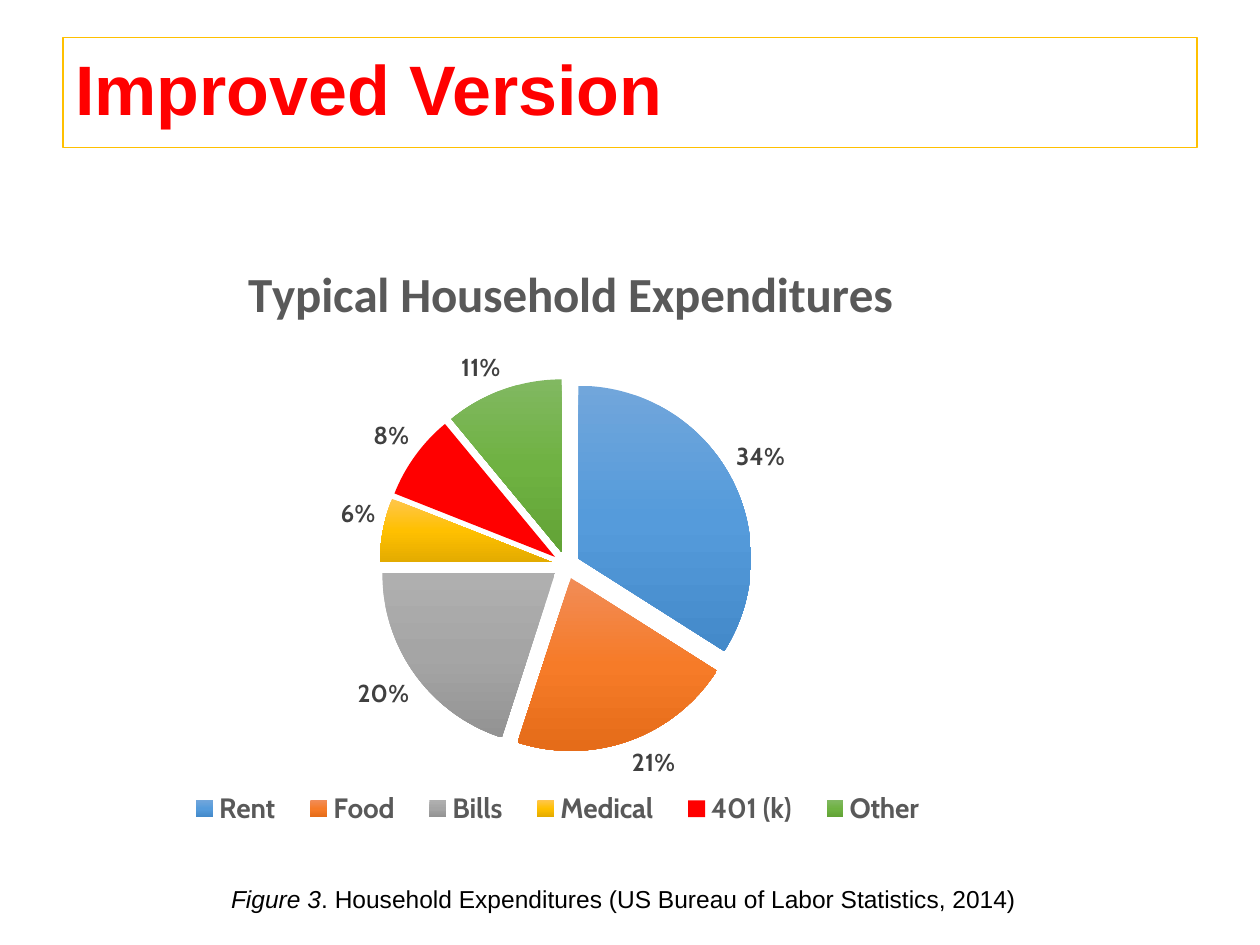
from lxml import etree
from pptx import Presentation
from pptx.chart.data import CategoryChartData
from pptx.dml.color import RGBColor
from pptx.enum.chart import XL_CHART_TYPE as ChartType
from pptx.enum.chart import XL_LABEL_POSITION as LabelPosition
from pptx.enum.chart import XL_LEGEND_POSITION as LegendPosition
from pptx.enum.shapes import MSO_SHAPE as Shape
from pptx.enum.text import MSO_ANCHOR as Anchor
from pptx.enum.text import PP_ALIGN as Align
from pptx.oxml import parse_xml
from pptx.oxml.ns import nsdecls, qn
from pptx.util import Inches, Pt

# Content
HEADING = "Improved Version"
CHART_TITLE = "Typical Household Expenditures"
CAPTION = [
    ("Figure 3", True),
    (". Household Expenditures (US Bureau of Labor Statistics, 2014)", False),
]
# Category, percentage, gradient from top to bottom (one colour is a plain fill)
EXPENDITURES = [
    ("Rent", 34, ["71A6DB", "559BDB", "448ACA"]),
    ("Food", 21, ["F18C57", "F67B28", "E56C19"]),
    ("Bills", 20, ["AFAFAF", "A5A5A5", "939393"]),
    ("Medical", 6, ["FFC64B", "FFC000", "E3AB00"]),
    ("401 (k)", 8, ["FF0000"]),
    ("Other", 11, ["81B861", "6FB242", "62A336"]),
]
EXPLOSION = 8

# Places: left, top, width, height in inches
HEADING_BOX = (0.5, 0.3, 9, 0.87)
CHART_BOX = (1.08, 1.75, 6.83, 5.02)
CAPTION_BOX = (1.4, 6.96, 7.1, 0.34)

# Places inside the chart, as fractions of its size
TITLE_PLACE = {"x": 0.12, "y": 0.05}
PIE_PLACE = {"x": 0.28, "y": 0.25, "w": 0.44, "h": 0.59}
LEGEND_PLACE = {"x": 0.04, "y": 0.89, "w": 0.9, "h": 0.08}


def color(hex_string):
    return RGBColor.from_string(hex_string)


def inches(box):
    return [Inches(value) for value in box]


def style_font(font, size, hex_color, name, bold=False, italic=False):
    font.size = Pt(size)
    font.color.rgb = color(hex_color)
    font.name = name
    font.bold = bold
    font.italic = italic


def add_text(paragraph, text, size=14, hex_color="000000", name="Arial",
             bold=False, italic=False):
    run = paragraph.add_run()
    run.text = text
    style_font(run.font, size, hex_color, name, bold, italic)


def make_layout(place, inner=False):
    """Build a c:layout element from fractions of the chart."""
    layout = parse_xml(f'<c:layout {nsdecls("c")}/>')
    manual = etree.SubElement(layout, qn("c:manualLayout"))
    if inner:
        etree.SubElement(manual, qn("c:layoutTarget"), val="inner")
    for axis in "xy":
        etree.SubElement(manual, qn(f"c:{axis}Mode"), val="edge")
    for key, value in place.items():
        etree.SubElement(manual, qn(f"c:{key}"), val=str(value))
    return layout


def set_layout(parent, after, place, inner=False):
    for old in parent.findall(qn("c:layout")):
        parent.remove(old)
    layout = make_layout(place, inner)
    if after is None:
        parent.insert(0, layout)
    else:
        parent.find(qn(after)).addnext(layout)


def fill_slice(point, colors):
    fill = point.format.fill
    if len(colors) == 1:
        fill.solid()
        fill.fore_color.rgb = color(colors[0])
        return
    # Replace the default two stops, then point the gradient downwards
    fill.gradient()
    step = 100000 // (len(colors) - 1)
    stops = "".join(
        f'<a:gs pos="{index * step}"><a:srgbClr val="{value}"/></a:gs>'
        for index, value in enumerate(colors)
    )
    stop_list = fill.gradient_stops[0]._gs.getparent()
    stop_list[:] = list(parse_xml(f'<a:gsLst {nsdecls("a")}>{stops}</a:gsLst>'))
    fill.gradient_angle = 270


def add_heading(slide):
    shape = slide.shapes.add_shape(Shape.RECTANGLE, *inches(HEADING_BOX))
    shape.shadow.inherit = False
    shape.fill.background()
    shape.line.color.rgb = color("FFC000")
    shape.line.width = Pt(0.75)
    shape.text_frame.vertical_anchor = Anchor.MIDDLE
    paragraph = shape.text_frame.paragraphs[0]
    paragraph.alignment = Align.LEFT
    paragraph.line_spacing = 0.9
    add_text(paragraph, HEADING, size=40, hex_color="FF0000", bold=True)


def add_pie(slide):
    data = CategoryChartData()
    data.categories = [name for name, _, _ in EXPENDITURES]
    data.add_series("Series 1", [value for _, value, _ in EXPENDITURES])
    frame = slide.shapes.add_chart(ChartType.PIE, *inches(CHART_BOX), data)
    chart = frame.chart
    style_font(chart.font, 10, "000000", "Calibri")

    # Title
    chart.has_title = True
    title = chart.chart_title
    add_text(title.text_frame.paragraphs[0], CHART_TITLE, size=28,
             hex_color="595959", name="Calibri", bold=True)
    set_layout(title._element, "c:tx", TITLE_PLACE)

    # Legend
    chart.has_legend = True
    chart.legend.position = LegendPosition.BOTTOM
    chart.legend.include_in_layout = False
    style_font(chart.legend.font, 16, "595959", "Cabin", bold=True)
    set_layout(chart.legend._element, "c:legendPos", LEGEND_PLACE)

    # Slices
    plot = chart.plots[0]
    plot.vary_by_categories = True
    set_layout(plot._element.getparent(), None, PIE_PLACE, inner=True)
    series = plot.series[0]
    explosion = parse_xml(f'<c:explosion {nsdecls("c")} val="{EXPLOSION}"/>')
    series._element.find(qn("c:tx")).addnext(explosion)
    for index, (_, _, colors) in enumerate(EXPENDITURES):
        fill_slice(series.points[index], colors)

    # Percentages
    labels = series.data_labels
    labels.show_value = False
    labels.show_percentage = True
    labels.number_format = "0%"
    labels.number_format_is_linked = False
    labels.position = LabelPosition.OUTSIDE_END
    style_font(labels.font, 14, "404040", "Cabin", bold=True)


def add_caption(slide):
    frame = slide.shapes.add_textbox(*inches(CAPTION_BOX)).text_frame
    frame.word_wrap = True
    frame.vertical_anchor = Anchor.MIDDLE
    paragraph = frame.paragraphs[0]
    paragraph.alignment = Align.CENTER
    for text, italic in CAPTION:
        add_text(paragraph, text, italic=italic)


def main():
    presentation = Presentation()
    presentation.slide_width = Inches(10)
    presentation.slide_height = Inches(7.5)
    slide = presentation.slides.add_slide(presentation.slide_layouts[6])
    add_caption(slide)
    add_pie(slide)
    add_heading(slide)
    presentation.save("out.pptx")


if __name__ == "__main__":
    main()
